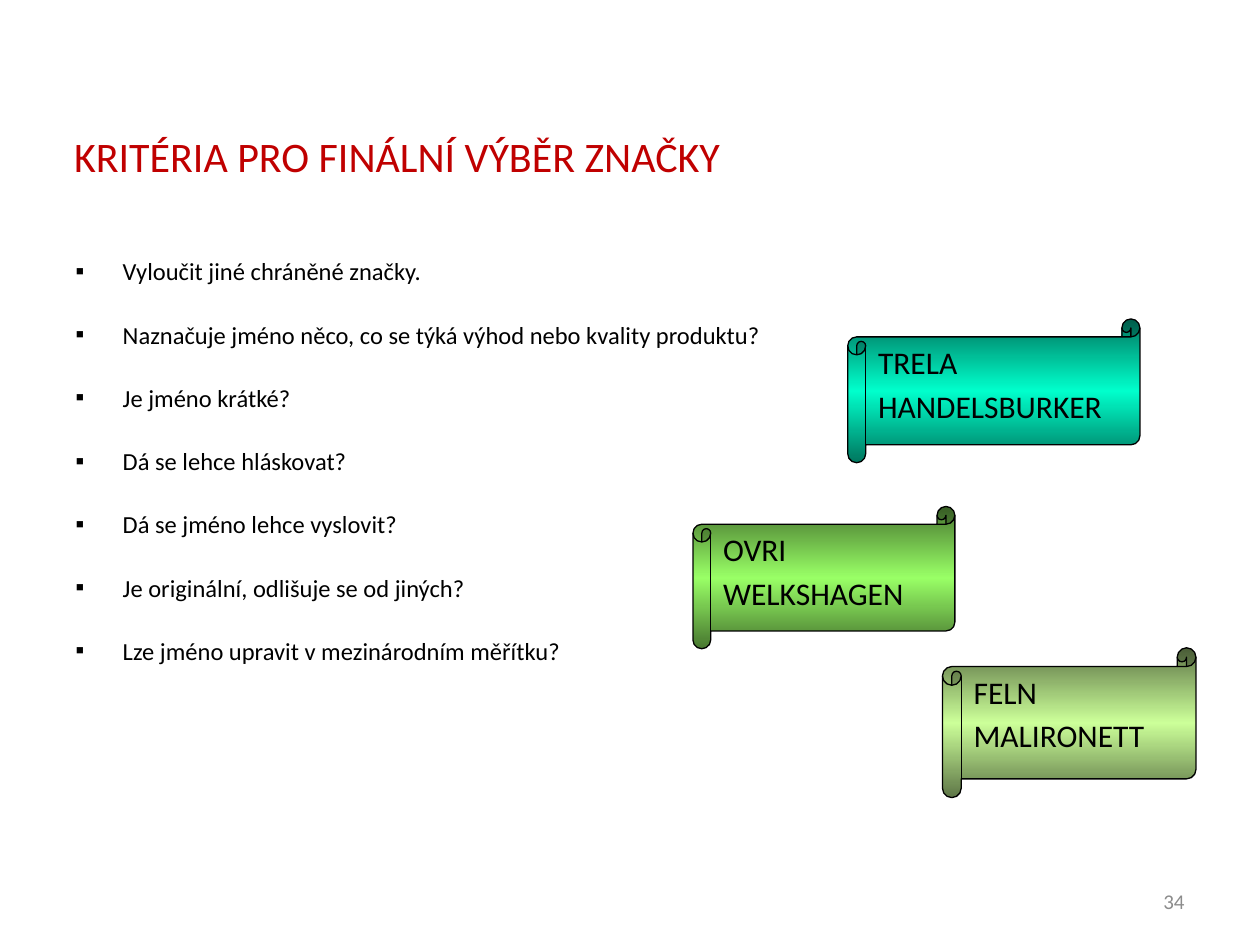
from copy import deepcopy

from lxml.etree import SubElement
from pptx import Presentation
from pptx.dml.color import RGBColor as Rgb
from pptx.enum.shapes import MSO_SHAPE as Kind
from pptx.enum.text import MSO_ANCHOR as Anchor, MSO_AUTO_SIZE as Fit, PP_ALIGN as Align
from pptx.oxml.ns import qn
from pptx.util import Cm, Pt

COLORS = {
    "title": "C00000", "text": "000000", "page": "8C8C8C",
    "teal": "00FFCC", "teal edge": "00765E",
    "green": "99FF66", "green edge": "47762F",
    "lime": "CCFF99", "lime edge": "5E7647",
}
ITEMS = [
    "Vyloučit jiné chráněné značky.",
    "Naznačuje jméno něco, co se týká výhod nebo kvality produktu?",
    "Je jméno krátké?",
    "Dá se lehce hláskovat?",
    "Dá se jméno lehce vyslovit?",
    "Je originální, odlišuje se od jiných?",
    "Lze jméno upravit v mezinárodním měřítku?",
]
SCROLLS = [
    (("TRELA", "HANDELSBURKER"), "teal", (17.09, 6.43, 5.89, 2.9)),
    (("OVRI", "WELKSHAGEN"), "green", (13.97, 10.21, 5.28, 2.87)),
    (("FELN", "MALIRONETT"), "lime", (19, 13.06, 5.11, 3.02)),
]


def place(shape, box):
    for name, size in zip(("left", "top", "width", "height"), box):
        setattr(shape, name, Cm(size))


def write(shape, lines, size, color="text", anchor=Anchor.TOP, bullet=None, **form):
    """Fill a shape with one formatted paragraph per line."""
    frame = shape.text_frame
    frame.word_wrap, frame.auto_size = True, Fit.NONE
    frame.vertical_anchor = anchor
    frame.text = "\n".join(lines)
    for i, para in enumerate(frame.paragraphs):
        for name, value in ({"alignment": Align.LEFT} | form).items():
            setattr(para, name, value)
        para.space_before = Pt(size * 0.18 if i else 0)
        if bullet:
            props = para._p.get_or_add_pPr()
            props.set("marL", str(Cm(0.95)))
            props.set("indent", str(Cm(-0.95)))
            SubElement(props, qn("a:buFont"), typeface="Calibri")
            SubElement(props, qn("a:buChar"), char=bullet)
        font = para.runs[0].font
        font.name, font.size = "Calibri", Pt(size)
        font.color.rgb = Rgb.from_string(COLORS[color])


deck = Presentation()
deck.slide_width, deck.slide_height = Cm(25.4), Cm(19.05)
slide = deck.slides.add_slide(deck.slide_layouts[1])
title, body = slide.placeholders

place(title, (1.24, 2.46, 22.86, 1.37))
write(title, ["KRITÉRIA PRO FINÁLNÍ VÝBĚR ZNAČKY"], 24, "title", Anchor.MIDDLE)
place(body, (1.27, 4.45, 22.86, 12.57))
write(body, ITEMS, 14, bullet="▪", line_spacing=2.0)

page = slide.shapes.add_textbox(Cm(18.21), Cm(17.65), Cm(5.92), Cm(1.02))
write(page, ["34"], 12, "page", Anchor.MIDDLE, alignment=Align.RIGHT)

for names, color, box in SCROLLS:
    scroll = slide.shapes.add_shape(Kind.HORIZONTAL_SCROLL, *map(Cm, box))
    scroll.shadow.inherit = False
    scroll.line.color.rgb = Rgb.from_string(COLORS["text"])
    scroll.line.width = Pt(0.75)
    fill = scroll.fill
    fill.gradient()
    fill.gradient_angle = 90
    first = fill._fill._gradFill.find(qn("a:gsLst"))[0]
    first.addnext(deepcopy(first))
    edge = color + " edge"
    for stop, tone, spot in zip(fill.gradient_stops, (edge, color, edge), (0, 0.5, 1)):
        stop.color.rgb = Rgb.from_string(COLORS[tone])
        stop.position = spot
    write(scroll, names, 18)

deck.save("out.pptx")
